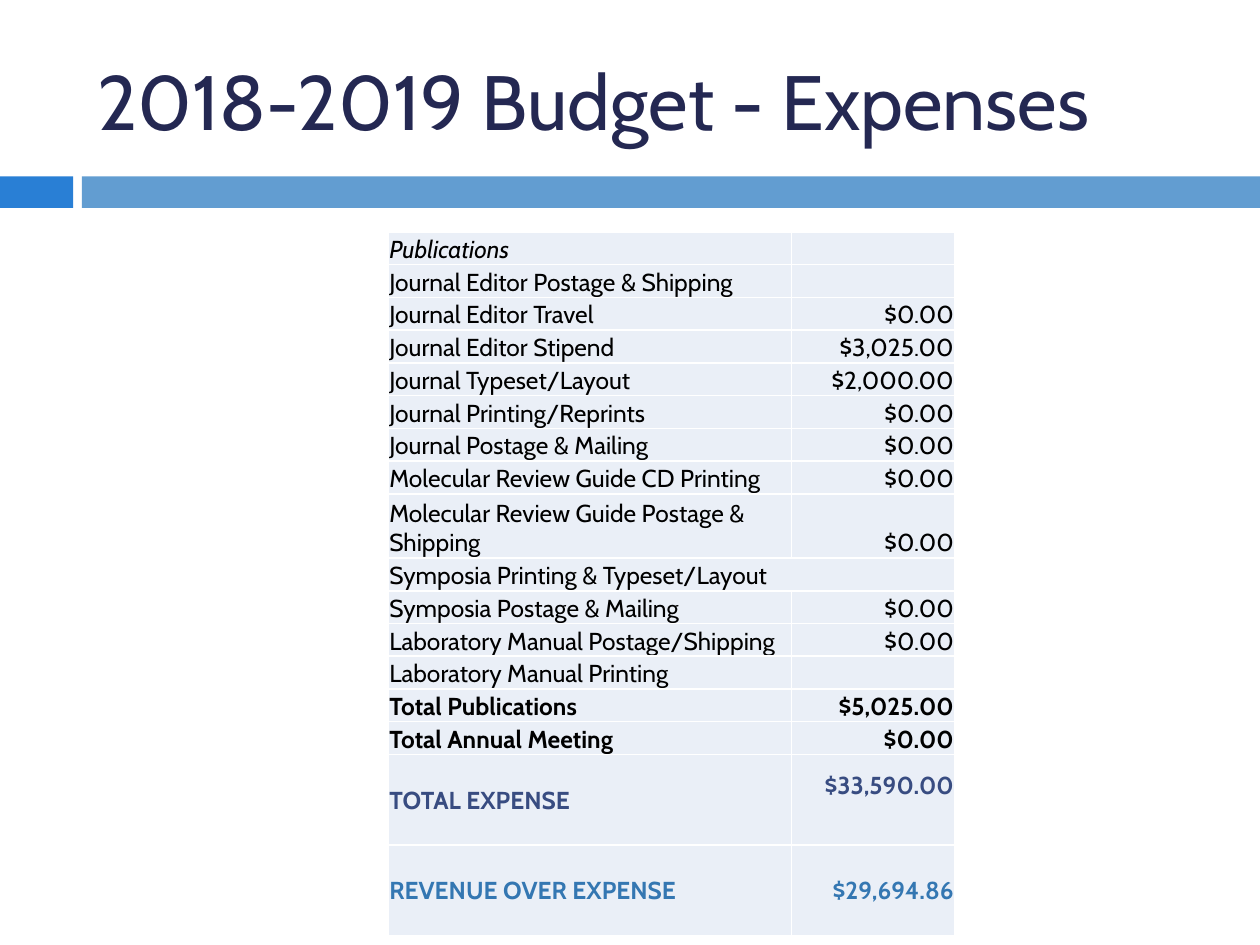
"""Build the 2018-2019 budget expenses slide."""
from lxml.etree import SubElement
from pptx import Presentation
from pptx.dml.color import RGBColor
from pptx.enum.shapes import MSO_SHAPE
from pptx.enum.text import MSO_ANCHOR, PP_ALIGN
from pptx.oxml.ns import qn
from pptx.util import Inches, Pt

TITLE = "2018-2019 Budget - Expenses"
EXPENSES = [
    ("Publications", "", "heading"),
    ("Journal Editor Postage & Shipping", "", "item"),
    ("Journal Editor Travel", "$0.00", "item"),
    ("Journal Editor Stipend", "$3,025.00", "item"),
    ("Journal Typeset/Layout", "$2,000.00", "item"),
    ("Journal Printing/Reprints", "$0.00", "item"),
    ("Journal Postage & Mailing", "$0.00", "item"),
    ("Molecular Review Guide CD Printing", "$0.00", "item"),
    ("Molecular Review Guide Postage & Shipping", "$0.00", "long"),
    ("Symposia Printing & Typeset/Layout", "", "merged"),
    ("Symposia Postage & Mailing", "$0.00", "item"),
    ("Laboratory Manual Postage/Shipping", "$0.00", "item"),
    ("Laboratory Manual Printing", "", "item"),
    ("Total Publications", "$5,025.00", "subtotal"),
    ("Total Annual Meeting", "$0.00", "subtotal"),
    ("TOTAL EXPENSE", "$33,590.00", "expense"),
    ("REVENUE OVER EXPENSE", "$29,694.86", "revenue"),
]
COLORS = {
    "title": "242852", "accent": "297FD5", "band": "629DD1",
    "cell": "EAEFF7", "border": "FFFFFF", "text": "000000",
    "expense": "384C81", "revenue": "3477B2",
}
ROW_HEIGHTS = {"long": 0.51, "expense": 0.72, "revenue": 0.72}
BASE_HEIGHT = 0.26
COLUMN_WIDTHS = (3.2, 1.3)
BARS = [(0, 0.58, "accent"), (0.65, 9.35, "band")]
FONT = "Cabin"


def color(name):
    return RGBColor.from_string(COLORS[name])


def style_runs(paragraph, size, color_name, bold=False, italic=False):
    for run in paragraph.runs:
        run.font.name = FONT
        run.font.size = Pt(size)
        run.font.bold = bold
        run.font.italic = italic
        run.font.color.rgb = color(color_name)


def add_borders(cell):
    properties = cell._tc.get_or_add_tcPr()
    for side in ("lnL", "lnR", "lnT", "lnB"):
        line = SubElement(properties, qn(f"a:{side}"), w=str(Pt(1)))
        fill = SubElement(line, qn("a:solidFill"))
        SubElement(fill, qn("a:srgbClr"), val=COLORS["border"])


def fill_cell(cell, text, kind, align):
    add_borders(cell)
    cell.fill.solid()
    cell.fill.fore_color.rgb = color("cell")
    cell.margin_left = cell.margin_right = cell.margin_top = Inches(0.01)
    cell.margin_bottom = 0
    grand = kind in ("expense", "revenue")
    cell.vertical_anchor = MSO_ANCHOR.MIDDLE if grand else MSO_ANCHOR.BOTTOM
    cell.text_frame.text = text
    paragraph = cell.text_frame.paragraphs[0]
    paragraph.alignment = align
    if text:
        style_runs(paragraph, 14, kind if grand else "text",
                   grand or kind == "subtotal", kind == "heading")
    else:
        SubElement(paragraph._p, qn("a:endParaRPr"), sz="1400")


def add_expense_table(slide):
    heights = [ROW_HEIGHTS.get(kind, BASE_HEIGHT) for _, _, kind in EXPENSES]
    table = slide.shapes.add_table(
        len(EXPENSES), len(COLUMN_WIDTHS), Inches(3.08), Inches(1.84),
        Inches(sum(COLUMN_WIDTHS)), Inches(sum(heights))).table
    table.first_row = table.horz_banding = False
    for column, width in zip(table.columns, COLUMN_WIDTHS):
        column.width = Inches(width)
    for index, (label, amount, kind) in enumerate(EXPENSES):
        table.rows[index].height = Inches(heights[index])
        label_cell, amount_cell = table.cell(index, 0), table.cell(index, 1)
        fill_cell(label_cell, label, kind, PP_ALIGN.LEFT)
        fill_cell(amount_cell, amount, kind, PP_ALIGN.RIGHT)
        if kind == "merged":
            label_cell.merge(amount_cell)
        if kind == "expense":
            amount_cell.margin_bottom = Inches(0.24)


def main():
    deck = Presentation()
    deck.slide_width, deck.slide_height = Inches(10), Inches(7.5)
    slide = deck.slides.add_slide(deck.slide_layouts[5])

    for left, width, name in BARS:
        bar = slide.shapes.add_shape(MSO_SHAPE.RECTANGLE, Inches(left),
                                     Inches(1.4), Inches(width), Inches(0.25))
        bar.shadow.inherit = False
        bar.fill.solid()
        bar.fill.fore_color.rgb = color(name)
        bar.line.fill.background()

    title = slide.shapes.title
    title.left, title.top = Inches(0.67), Inches(0.25)
    title.width, title.height = Inches(8.92), Inches(1.08)
    title.text_frame.text = TITLE
    title.text_frame.vertical_anchor = MSO_ANCHOR.MIDDLE
    heading = title.text_frame.paragraphs[0]
    heading.alignment = PP_ALIGN.LEFT
    style_runs(heading, 44, "title")

    add_expense_table(slide)
    deck.save("out.pptx")


if __name__ == "__main__":
    main()
